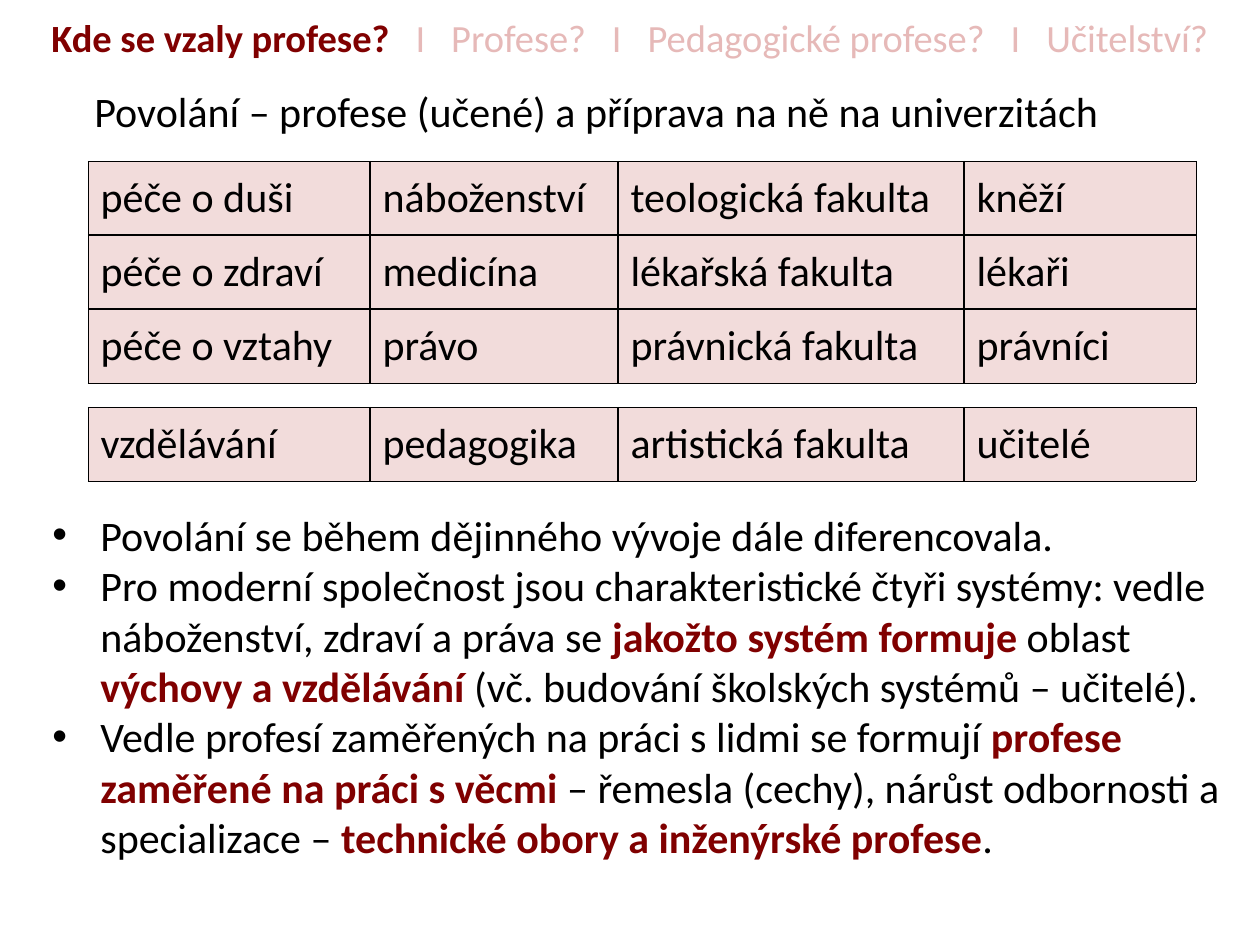
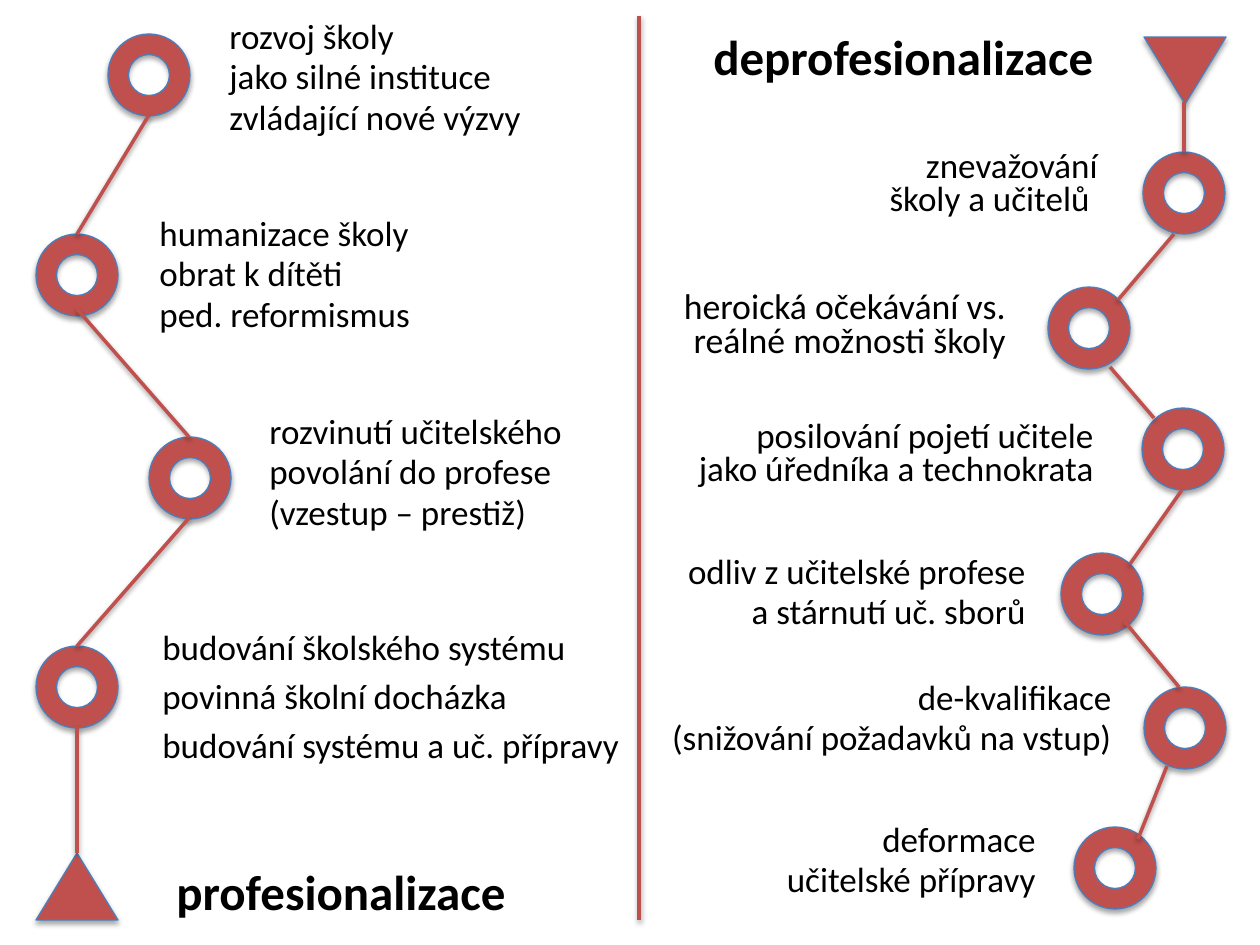
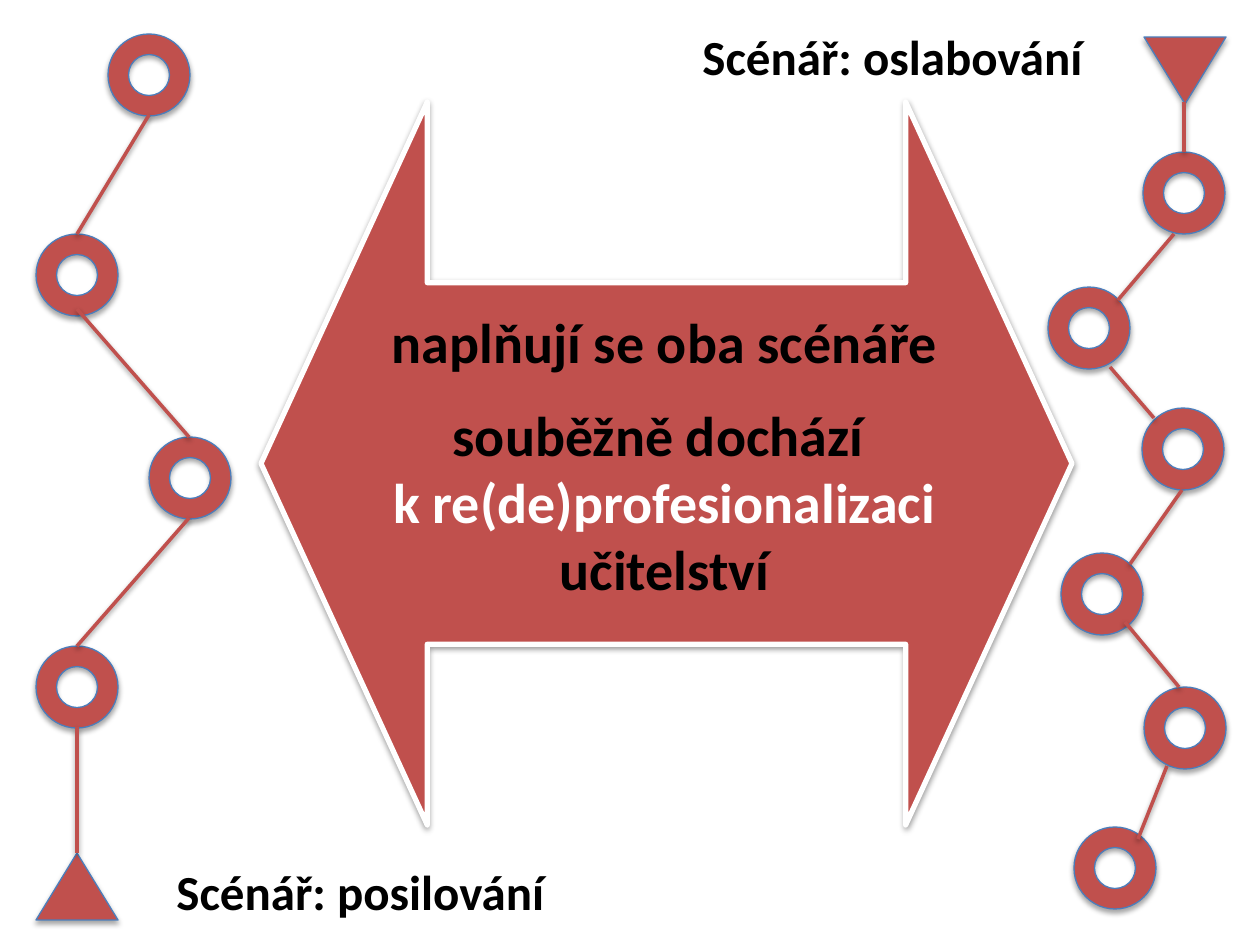
from dataclasses import dataclass
from lxml import etree
from pptx import Presentation
from pptx.dml.color import RGBColor
from pptx.enum.shapes import MSO_CONNECTOR, MSO_SHAPE
from pptx.enum.text import MSO_ANCHOR, PP_ALIGN
from pptx.oxml.ns import qn
from pptx.util import Emu, Pt

LEFT, MID, RIGHT = PP_ALIGN.LEFT, PP_ALIGN.CENTER, PP_ALIGN.RIGHT
TOP, CENTER = MSO_ANCHOR.TOP, MSO_ANCHOR.MIDDLE
RING, PEAK, ARROW = MSO_SHAPE.DONUT, MSO_SHAPE.ISOSCELES_TRIANGLE, MSO_SHAPE.LEFT_RIGHT_ARROW
STRAIGHT = MSO_CONNECTOR.STRAIGHT


@dataclass(frozen=True)
class Theme:
    font: str = "Calibri"
    ink: str = "000000"
    paper: str = "FFFFFF"
    dark: str = "800000"
    pale: str = "E6B9B8"
    cell: str = "F2DCDB"
    red: str = "C0504D"
    edge: str = "4B7EBC"
    nav: int = 22
    body: int = 24
    note: int = 20
    wide: float = 20.4
    head: int = 28
    big: int = 32


T = Theme()
SCALE = 914400 / 126

NAV = [[("Kde se vzaly profese?   ", T.dark, True),
        ("I   Profese?   I   Pedagogické profese?   I   Učitelství?", T.pale, False)]]
LEAD = ["Povolání – profese (učené) a příprava na ně na univerzitách"]
COLS = [282, 248, 346, 232]
ROW = 74
TABLES = [
    (161, [["péče o duši", "náboženství", "teologická fakulta", "kněží"],
           ["péče o zdraví", "medicína", "lékařská fakulta", "lékaři"],
           ["péče o vztahy", "právo", "právnická fakulta", "právníci"]]),
    (407, [["vzdělávání", "pedagogika", "artistická fakulta", "učitelé"]]),
]
POINTS = [
    ["Povolání se během dějinného vývoje dále diferencovala."],
    ["Pro moderní společnost jsou charakteristické čtyři systémy: vedle náboženství, zdraví a práva se ",
     ("jakožto systém formuje ", T.dark, True), "oblast ",
     ("výchovy a vzdělávání ", T.dark, True),
     "(vč. budování školských systémů – učitelé)."],
    ["Vedle profesí zaměřených na práci s lidmi se formují ",
     ("profese zaměřené na práci s věcmi", T.dark, True),
     " – řemesla (cechy), nárůst odbornosti a specializace – ",
     ("technické obory a inženýrské profese", T.dark, True), "."],
]

RISE = [
    ((150, 619, 489, 135), 1, ["budování školského systému", "povinná školní docházka",
                               "budování systému a uč. přípravy"]),
    ((257, 411, 406, 137), 0.8, ["rozvinutí učitelského", "povolání do profese", "(vzestup – prestiž)"]),
    ((217, 16, 358, 135), 0.8, ["rozvoj školy", "jako silné instituce", "zvládající nové výzvy"]),
    ((147, 213, 499, 136), 0.8, ["humanizace školy", "obrat k dítěti", "ped. reformismus"]),
]
FALL = [
    ((850, 145, 260, 98), T.note, ["znevažování\nškoly a učitelů "]),
    ((668, 286, 350, 96), T.wide, ["heroická očekávání vs.\nreálné možnosti školy"]),
    ((680, 415, 426, 86), T.note, ["posilování pojetí učitele\njako úředníka a technokrata"]),
    ((645, 677, 479, 107), T.note, ["de-kvalifikace", "(snižování požadavků na vstup)"]),
    ((680, 819, 376, 98), T.note, ["deformace ", "učitelské přípravy "]),
    ((639, 551, 407, 98), T.note, ["odliv z učitelské profese ", "a stárnutí uč. sborů "]),
]
HEADS = [
    [((164, 855, 410, 74), "profesionalizace"), ((701, 20, 414, 82), "deprofesionalizace")],
    [((164, 855, 410, 74), "Scénář: posilování"), ((690, 20, 425, 82), "Scénář: oslabování")],
]

SIZE, HIGH = 82, 67
PEAKS = [(36, 853, 0), (1144, 37, 180)]
RINGS = [(36, 646), (149, 437), (36, 234), (108, 34),
         (1143, 152), (1048, 287), (1142, 408), (1061, 553), (1144, 687), (1074, 827)]
LINKS = [(77, 853, 77, 727), (77, 646, 189, 518), (189, 437, 77, 309), (77, 234, 149, 115),
         (1118, 300, 1174, 234), (1184, 152, 1184, 102), (1130, 564, 1182, 490),
         (1138, 839, 1167, 766), (1110, 367, 1154, 418), (1179, 687, 1125, 622)]
SPLIT = (639, 920, 639, 16)
BOTH = ["naplňují se oba scénáře", "souběžně dochází ",
        [("k re(de)profesionalizaci", T.paper, True)], "učitelství"]


def px(num):
    return Emu(round(num * SCALE))


def rgb(code):
    return RGBColor.from_string(code)


def write(para, runs, size, bold=False):
    for run in [runs] if isinstance(runs, str) else runs:
        words, tint, thick = (run, T.ink, bold) if isinstance(run, str) else run
        for i, part in enumerate(words.split("\n")):
            if i:
                para.add_line_break()
            piece = para.add_run()
            piece.text = part
            font = piece.font
            font.name, font.size, font.bold = T.font, Pt(size), thick
            font.color.rgb = rgb(tint)


def text(slide, box, paras, size, align=LEFT, bold=False, lead=1, gap=0.2, anchor=TOP):
    frame = slide.shapes.add_textbox(*map(px, box)).text_frame
    frame.word_wrap = True
    frame.vertical_anchor = anchor
    for i, runs in enumerate(paras):
        para = frame.add_paragraph() if i else frame.paragraphs[0]
        para.alignment, para.line_spacing = align, float(lead)
        para.space_before = Pt(round(size * gap, 1))
        write(para, runs, size, bold)
    return frame


def shade(item, alpha, dist):
    props = item._element.spPr
    effect = etree.SubElement(props, qn("a:effectLst"))
    cast = etree.SubElement(effect, qn("a:outerShdw"), blurRad=str(Pt(3.1)), dist=str(Pt(dist)),
                            dir="5400000", rotWithShape="0")
    tone = etree.SubElement(cast, qn("a:srgbClr"), val=T.ink)
    etree.SubElement(tone, qn("a:alpha"), val=str(alpha * 1000))


def shape(slide, kind, box, turn=0, edge=T.edge, width=0.75, alpha=35, dist=1.8):
    item = slide.shapes.add_shape(kind, *map(px, box))
    item.rotation = turn
    item.fill.solid()
    item.fill.fore_color.rgb = rgb(T.red)
    item.line.color.rgb = rgb(edge)
    item.line.width = Pt(width)
    shade(item, alpha, dist)
    return item


def link(slide, ends):
    item = slide.shapes.add_connector(STRAIGHT, *map(px, ends))
    item.line.color.rgb = rgb(T.red)
    item.line.width = Pt(2)
    shade(item, 38, 1.6)


def border(cell, side, width):
    line = etree.SubElement(cell._tc.get_or_add_tcPr(), qn("a:ln" + side), w=str(Pt(width)))
    fill = etree.SubElement(line, qn("a:solidFill"))
    etree.SubElement(fill, qn("a:srgbClr"), val=T.ink)


def table(slide, top, rows):
    last, end = len(rows) - 1, len(COLS) - 1
    grid = slide.shapes.add_table(len(rows), len(COLS), px(88), px(top),
                                  px(sum(COLS)), px(ROW * len(rows))).table
    grid.first_row = grid.horz_banding = False
    for col, width in zip(grid.columns, COLS):
        col.width = px(width)
    for r, row in enumerate(rows):
        grid.rows[r].height = px(ROW)
        for c, words in enumerate(row):
            cell = grid.cell(r, c)
            cell.vertical_anchor = CENTER
            outer = {"L": c == 0, "R": c == end, "T": r == 0, "B": r == last}
            for side, rim in outer.items():
                border(cell, side, 0.25 if rim else 1)
            cell.fill.solid()
            cell.fill.fore_color.rgb = rgb(T.cell)
            write(cell.text_frame.paragraphs[0], words, T.body)


def bullet(para):
    props = para._p.get_or_add_pPr()
    props.set("marL", str(px(48)))
    props.set("indent", str(px(-48)))
    etree.SubElement(props, qn("a:buFont"), typeface="Arial")
    etree.SubElement(props, qn("a:buChar"), char="•")


def chains(slide, heads):
    for box, words in heads:
        text(slide, box, [words], T.head, bold=True)
    for x, y, turn in PEAKS:
        shape(slide, PEAK, (x, y, SIZE, HIGH), turn)
    for x, y in RINGS:
        shape(slide, RING, (x, y, SIZE, SIZE), 270)
    for ends in LINKS:
        link(slide, ends)


def origins(slide):
    text(slide, (82, 79, 1164, 83), LEAD, T.body)
    for top, rows in TABLES:
        table(slide, top, rows)
    for para in text(slide, (40, 503, 1196, 369), POINTS, T.body, gap=0).paragraphs:
        bullet(para)
    frame = text(slide, (0, 5, 1260, 64), NAV, T.nav, MID, gap=0)
    frame.margin_left = frame.margin_right = px(18)
    frame.margin_top = frame.margin_bottom = px(9)


def trends(slide):
    chains(slide, HEADS[0])
    for box, lead, paras in RISE:
        text(slide, box, paras, T.note, lead=lead)
    link(slide, SPLIT)
    for box, size, paras in FALL:
        text(slide, box, paras, size, RIGHT, lead=0.8)


def outlook(slide):
    chains(slide, HEADS[1])
    arrow = shape(slide, ARROW, (261, 102, 811, 723), 0, T.paper, 3, 38, 1.6)
    arrow.adjustments[0], arrow.adjustments[1] = 0.5, 0.23
    frame = text(slide, (345, 296, 639, 318), BOTH, T.big, MID, True, gap=0, anchor=CENTER)
    frame.paragraphs[1].space_before = Pt(14.6)


def main():
    deck = Presentation()
    deck.slide_width, deck.slide_height = px(1260), px(945)
    for draw in (origins, trends, outlook):
        draw(deck.slides.add_slide(deck.slide_layouts[6]))
    deck.save("out.pptx")


if __name__ == "__main__":
    main()
